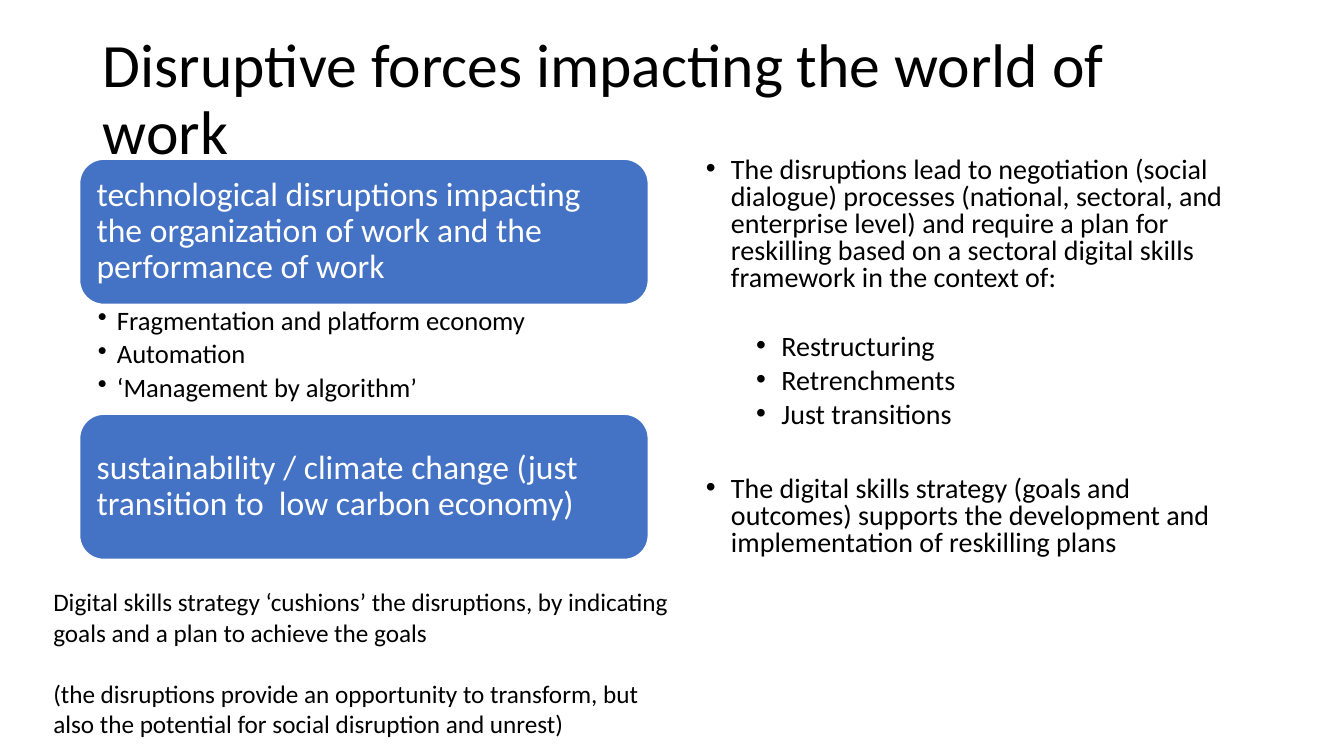
from dataclasses import dataclass

from lxml import etree
from pptx import Presentation
from pptx.dml.color import RGBColor
from pptx.enum.shapes import MSO_SHAPE
from pptx.enum.text import MSO_ANCHOR, MSO_AUTO_SIZE, PP_ALIGN
from pptx.oxml.ns import qn
from pptx.util import Pt

ROUND = MSO_SHAPE.ROUNDED_RECTANGLE
MIDDLE, TOP = MSO_ANCHOR.MIDDLE, MSO_ANCHOR.TOP
LEFT = PP_ALIGN.LEFT
FIXED = MSO_AUTO_SIZE.NONE
SCALE = 9144


@dataclass(frozen=True)
class Theme:
    """Colours, font and type sizes of the slide."""
    font: str = "Calibri"
    ink: RGBColor = RGBColor(0, 0, 0)
    paper: RGBColor = RGBColor(255, 255, 255)
    card: RGBColor = RGBColor(0x44, 0x72, 0xC4)
    title: int = 44
    head: int = 24
    body: int = 20
    item: int = 19
    note: int = 18


THEME = Theme()
FORCES = [
    ("technological disruptions impacting the organization of work "
     "and the performance of work",
     ["Fragmentation and platform economy", "Automation",
      "‘Management by algorithm’"]),
    ("sustainability / climate change (just transition to  low carbon economy)", []),
]
PLANS = [
    ("The disruptions lead to negotiation (social dialogue) processes (national, "
     "sectoral, and enterprise level) and require a plan for reskilling based on a "
     "sectoral digital skills framework in the context of:", 0, 0),
    ("Restructuring", 1, 30),
    ("Retrenchments", 1, 5),
    ("Just transitions", 1, 5),
    ("The digital skills strategy (goals and outcomes) supports the development "
     "and implementation of reskilling plans", 0, 34),
]
NOTES = [
    "Digital skills strategy ‘cushions’ the disruptions, by indicating "
    "goals and a plan to achieve the goals",
    "(the disruptions provide an opportunity to transform, but "
    "also the potential for social disruption and unrest)",
]


def px(*sizes):
    """Turn px lengths into EMU."""
    return [size * SCALE for size in sizes]


def place(shape, box):
    """Move a shape into its box."""
    shape.left, shape.top, shape.width, shape.height = px(*box)


def setup(frame, pads=(10, 5, 10, 5), anchor=TOP):
    """Set wrapping, margins and anchor of a text frame."""
    frame.word_wrap, frame.auto_size = True, FIXED
    frame.vertical_anchor = anchor
    (frame.margin_left, frame.margin_top,
     frame.margin_right, frame.margin_bottom) = px(*pads)


def style(para, size, color=THEME.ink, line=1.0, before=0, after=0):
    """Set spacing and font of a paragraph."""
    para.alignment = LEFT
    para.line_spacing = line
    para.space_before, para.space_after = Pt(before), Pt(after)
    font = para.font
    font.name, font.size, font.color.rgb = THEME.font, Pt(size), color


def bullet(para, left, hang):
    """Give a paragraph a round bullet and a hanging indent."""
    props = para._p.get_or_add_pPr()
    props.set("marL", str(left * SCALE))
    props.set("indent", str(-hang * SCALE))
    etree.SubElement(props, qn("a:buChar")).set("char", "•")


def fill(frame, texts):
    """Write one paragraph per text and yield each."""
    for i, text in enumerate(texts):
        para = frame.add_paragraph() if i else frame.paragraphs[0]
        para.text = text
        yield para


def add_title(slide, box):
    """Write the slide title."""
    title = slide.shapes.title
    place(title, box)
    setup(title.text_frame, anchor=MIDDLE)
    title.text_frame.text = "Disruptive forces impacting the world of work"
    style(title.text_frame.paragraphs[0], THEME.title, line=0.9)


def add_card(slide, box, text):
    """Draw a rounded heading card."""
    card = slide.shapes.add_shape(ROUND, *px(*box))
    card.shadow.inherit = False
    card.fill.solid()
    card.fill.fore_color.rgb = THEME.card
    card.line.color.rgb = THEME.paper
    card.line.width = Pt(1)
    setup(card.text_frame, (10, 10, 10, 10), MIDDLE)
    card.text_frame.text = text
    style(card.text_frame.paragraphs[0], THEME.head, THEME.paper, 0.9)


def add_items(slide, box, items):
    """Write the bullets under a card."""
    frame = slide.shapes.add_textbox(*px(*box)).text_frame
    setup(frame, (18, 3, 19, 3))
    for para in fill(frame, items):
        bullet(para, 19, 19)
        style(para, THEME.item, line=0.9, after=3.4)


def add_forces(slide, box):
    """Stack the cards, each followed by its bullets."""
    left, top, width, height = box
    gap = 109
    tall = (height - gap) // 2
    for text, items in FORCES:
        add_card(slide, (left, top, width, tall), text)
        if items:
            add_items(slide, (left, top + tall, width, gap), items)
        top += tall + gap


def add_plans(slide, box):
    """Write the two-level list in the body placeholder."""
    body = slide.placeholders[1]
    place(body, box)
    setup(body.text_frame)
    paras = fill(body.text_frame, [text for text, _, _ in PLANS])
    for para, (_, level, before) in zip(paras, PLANS):
        para.level = level
        bullet(para, 25 + 50 * level, 25)
        style(para, THEME.body, line=0.8, before=before)


def add_notes(slide, box):
    """Write the closing remarks."""
    frame = slide.shapes.add_textbox(*px(*box)).text_frame
    setup(frame)
    for i, para in enumerate(fill(frame, NOTES)):
        style(para, THEME.note, before=22 * i)


def main():
    """Build and save the slide."""
    deck = Presentation()
    deck.slide_width, deck.slide_height = px(1333, 750)
    slide = deck.slides.add_slide(deck.slide_layouts[1])
    add_title(slide, (92, 0, 1150, 200))
    add_forces(slide, (79, 158, 564, 397))
    add_plans(slide, (690, 152, 565, 408))
    add_notes(slide, (43, 577, 632, 162))
    deck.save("out.pptx")


if __name__ == "__main__":
    main()
